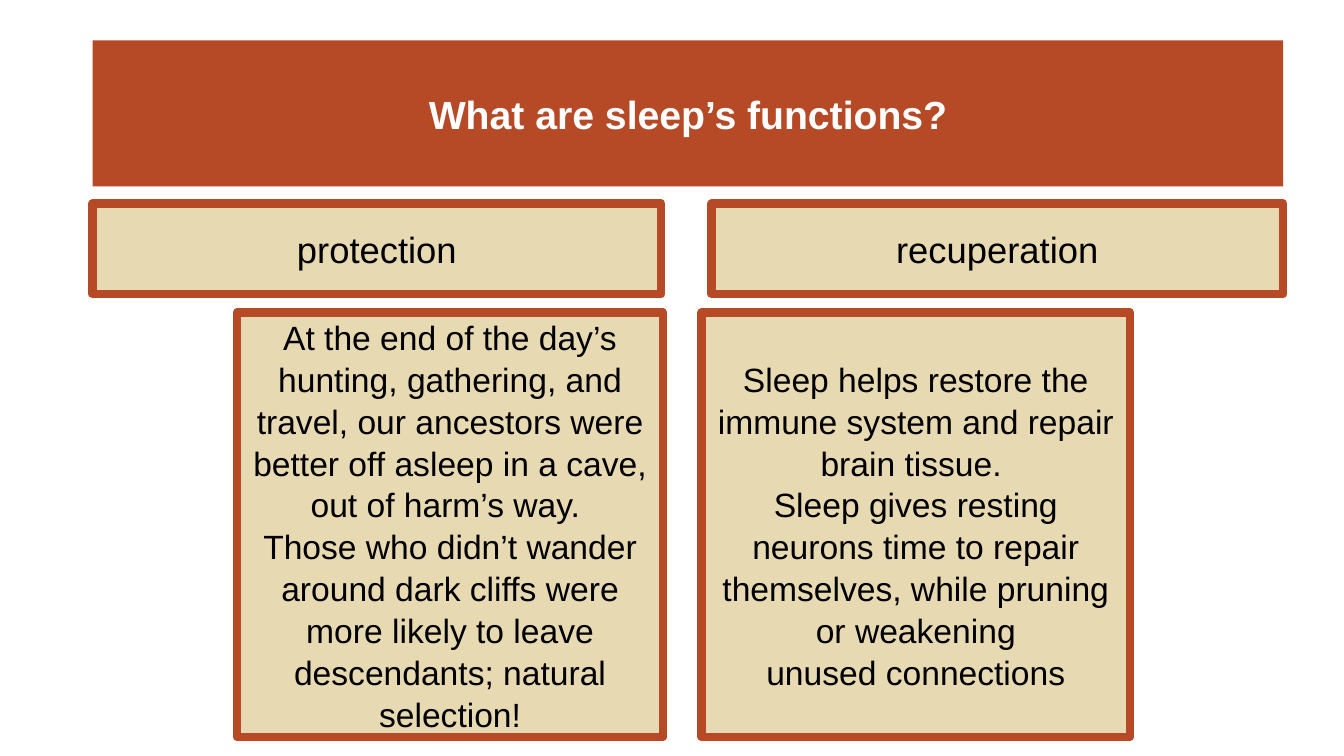
from pptx import Presentation
from pptx.dml.color import RGBColor
from pptx.enum.shapes import MSO_SHAPE
from pptx.enum.text import MSO_ANCHOR, MSO_AUTO_SIZE, PP_ALIGN
from pptx.util import Pt

RECTANGLE = MSO_SHAPE.RECTANGLE
MIDDLE = MSO_ANCHOR.MIDDLE
NO_AUTOFIT = MSO_AUTO_SIZE.NONE
CENTER = PP_ALIGN.CENTER

RUST, SAND, WHITE, BLACK = "B64926", "E7D9B1", "FFFFFF", "000000"


def color(value):
    return RGBColor.from_string(value)


def format_box(sp, box, fill, paragraphs, size, text_color, bold=False, spacing=1.0):
    for name, value in zip(("left", "top", "width", "height"), box):
        setattr(sp, name, Pt(value))
    sp.fill.solid()
    sp.fill.fore_color.rgb = color(fill)
    tf = sp.text_frame
    for name, value in {"word_wrap": True, "auto_size": NO_AUTOFIT, "vertical_anchor": MIDDLE}.items():
        setattr(tf, name, value)
    for i, text in enumerate(paragraphs):
        p = tf.add_paragraph() if i else tf.paragraphs[0]
        for name, value in {"alignment": CENTER, "line_spacing": spacing, "space_before": Pt(0)}.items():
            setattr(p, name, value)
        r = p.add_run()
        r.text = text
        for name, value in {"name": "Arial", "size": Pt(size), "bold": bold}.items():
            setattr(r.font, name, value)
        r.font.color.rgb = color(text_color)


prs = Presentation()
prs.slide_width, prs.slide_height = Pt(960), Pt(540)
s = prs.slides.add_slide(prs.slide_layouts[5])

format_box(s.shapes.title, (66.24, 28.8, 850.32, 104.4), RUST,
           ["What are sleep’s functions?"], 28, WHITE, bold=True)

HEADING_TOP, HEADING_HEIGHT = 145.44, 64.8
BODY_TOP, BODY_HEIGHT = 223.2, 303.12

columns = [
    ("protection", (66.24, 406.08), (169.2, 304.56), [
        "At the end of the day’s hunting, gathering, and travel, our ancestors were better off asleep in a cave, out of harm’s way. ",
        "Those who didn’t wander around dark cliffs were more likely to leave descendants; natural selection!",
    ]),
    ("recuperation", (508.32, 408.24), (501.12, 306), [
        "Sleep helps restore the immune system and repair brain tissue. ",
        "Sleep gives resting neurons time to repair themselves, while pruning or weakening",
        "unused connections",
    ]),
]

for heading, (heading_left, heading_width), (body_left, body_width), body in columns:
    boxes = [
        ((heading_left, HEADING_TOP, heading_width, HEADING_HEIGHT), [heading], 26, 1.0),
        ((body_left, BODY_TOP, body_width, BODY_HEIGHT), body, 24, 1.04),
    ]
    for box, paragraphs, size, spacing in boxes:
        sp = s.shapes.add_shape(RECTANGLE, *map(Pt, box))
        sp.shadow.inherit = False
        sp.line.color.rgb = color(RUST)
        sp.line.width = Pt(6)
        format_box(sp, box, SAND, paragraphs, size, BLACK, spacing=spacing)

prs.save("out.pptx")
